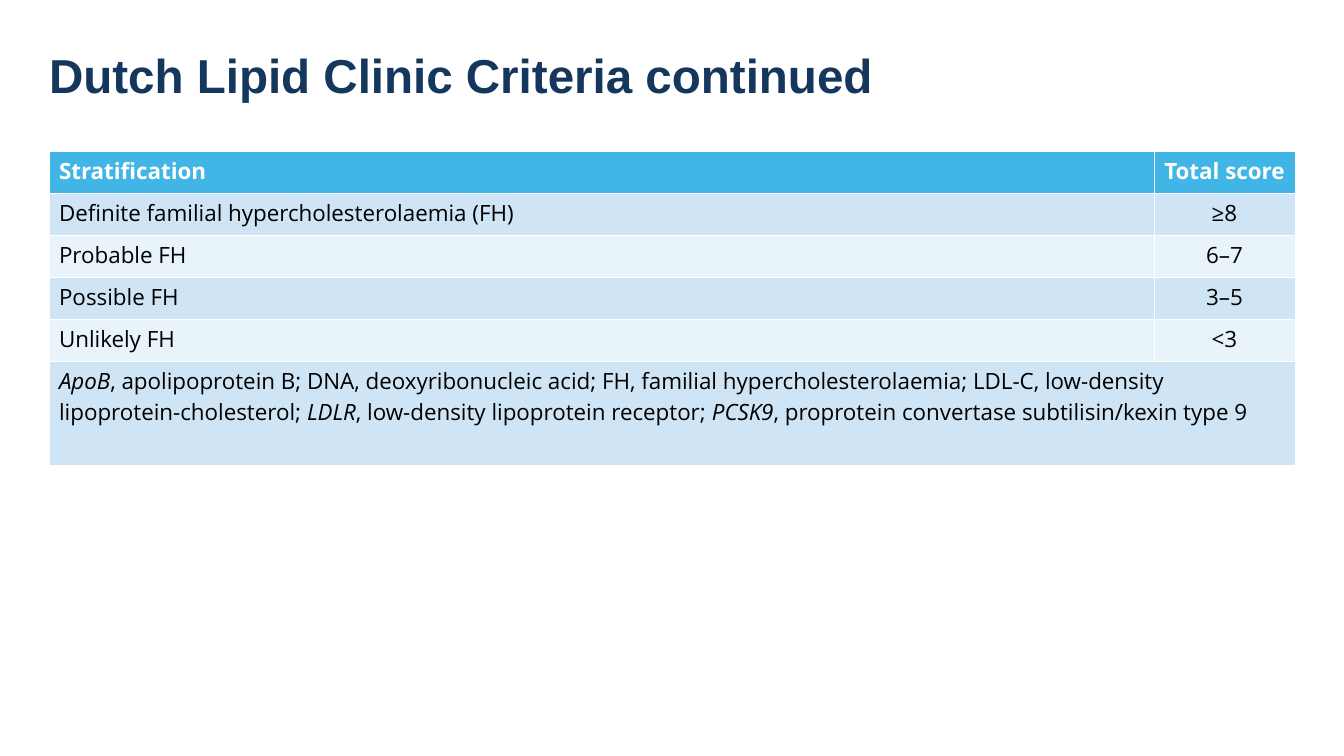
from lxml import etree
from pptx import Presentation
from pptx.dml.color import RGBColor
from pptx.enum.text import MSO_ANCHOR, PP_ALIGN
from pptx.oxml.ns import qn
from pptx.util import Emu, Pt

LEFT, CENTER = PP_ALIGN.LEFT, PP_ALIGN.CENTER
MIDDLE = MSO_ANCHOR.MIDDLE
PX_PER_INCH = 100.8

NAVY, WHITE, BLACK = "15375E", "FFFFFF", "000000"
HEADER_FILL = "41B6E6"
BAND_FILLS = ("CFE5F5", "E8F3FA")

COLUMN_WIDTHS = (1105, 141)
ROW_HEIGHT, NOTE_HEIGHT = 42, 104

ROWS = [
    ("Stratification", "Total score"),
    ("Definite familial hypercholesterolaemia (FH)", "≥8"),
    ("Probable FH", "6–7"),
    ("Possible FH", "3–5"),
    ("Unlikely FH", "<3"),
]
# Gene names alternate with their explanations
ABBREVIATIONS = [
    "ApoB",
    ", apolipoprotein B; DNA, deoxyribonucleic acid; FH, familial "
    "hypercholesterolaemia; LDL-C, low-density lipoprotein-cholesterol; ",
    "LDLR",
    ", low-density lipoprotein receptor; ",
    "PCSK9",
    ", proprotein convertase subtilisin/kexin type 9",
]


def px(n):
    return Emu(round(n * 914400 / PX_PER_INCH))


def rgb(color):
    return RGBColor.from_string(color)


def add_run(p, text, size=16, font="Open Sans", color=BLACK, bold=False, italic=False):
    r = p.add_run()
    r.text = text
    r.font.size = Pt(size)
    r.font.name = font
    r.font.color.rgb = rgb(color)
    r.font.bold = bold
    r.font.italic = italic


def add_title(slide, text):
    tf = slide.shapes.add_textbox(px(49), px(54), px(1246), px(49)).text_frame
    tf.word_wrap = True
    tf.vertical_anchor = MIDDLE
    tf.margin_left = tf.margin_right = tf.margin_top = tf.margin_bottom = 0
    p = tf.paragraphs[0]
    p.line_spacing = 0.9
    add_run(p, text, size=34, font="Arial", color=NAVY, bold=True)


def style_cell(cell, fill):
    """Give the cell its fill and thin white borders."""
    tcPr = cell._tc.get_or_add_tcPr()
    for side in ("a:lnL", "a:lnR", "a:lnT", "a:lnB"):
        ln = etree.SubElement(tcPr, qn(side), w=str(Pt(0.5)))
        solid = etree.SubElement(ln, qn("a:solidFill"))
        etree.SubElement(solid, qn("a:srgbClr"), val=WHITE)
    cell.fill.solid()
    cell.fill.fore_color.rgb = rgb(fill)


def add_score_table(slide):
    heights = [ROW_HEIGHT] * len(ROWS) + [NOTE_HEIGHT]
    table = slide.shapes.add_table(
        len(heights), len(COLUMN_WIDTHS), px(49), px(151),
        px(sum(COLUMN_WIDTHS)), px(sum(heights))).table
    for column, width in zip(table.columns, COLUMN_WIDTHS):
        column.width = px(width)
    for i, height in enumerate(heights):
        table.rows[i].height = px(height)
        fill = BAND_FILLS[(i - 1) % 2] if i else HEADER_FILL
        for cell in table.rows[i].cells:
            style_cell(cell, fill)

    for i, row in enumerate(ROWS):
        for j, text in enumerate(row):
            p = table.cell(i, j).text_frame.paragraphs[0]
            p.alignment = CENTER if j else LEFT
            add_run(p, text, color=BLACK if i else WHITE, bold=i == 0)

    note = table.cell(len(ROWS), 0)
    note.merge(table.cell(len(ROWS), 1))
    for k, text in enumerate(ABBREVIATIONS):
        add_run(note.text_frame.paragraphs[0], text, italic=k % 2 == 0)


def main():
    prs = Presentation()
    prs.slide_width, prs.slide_height = px(1344), px(756)
    slide = prs.slides.add_slide(prs.slide_layouts[6])
    add_title(slide, "Dutch Lipid Clinic Criteria continued")
    add_score_table(slide)
    prs.save("out.pptx")


if __name__ == "__main__":
    main()
